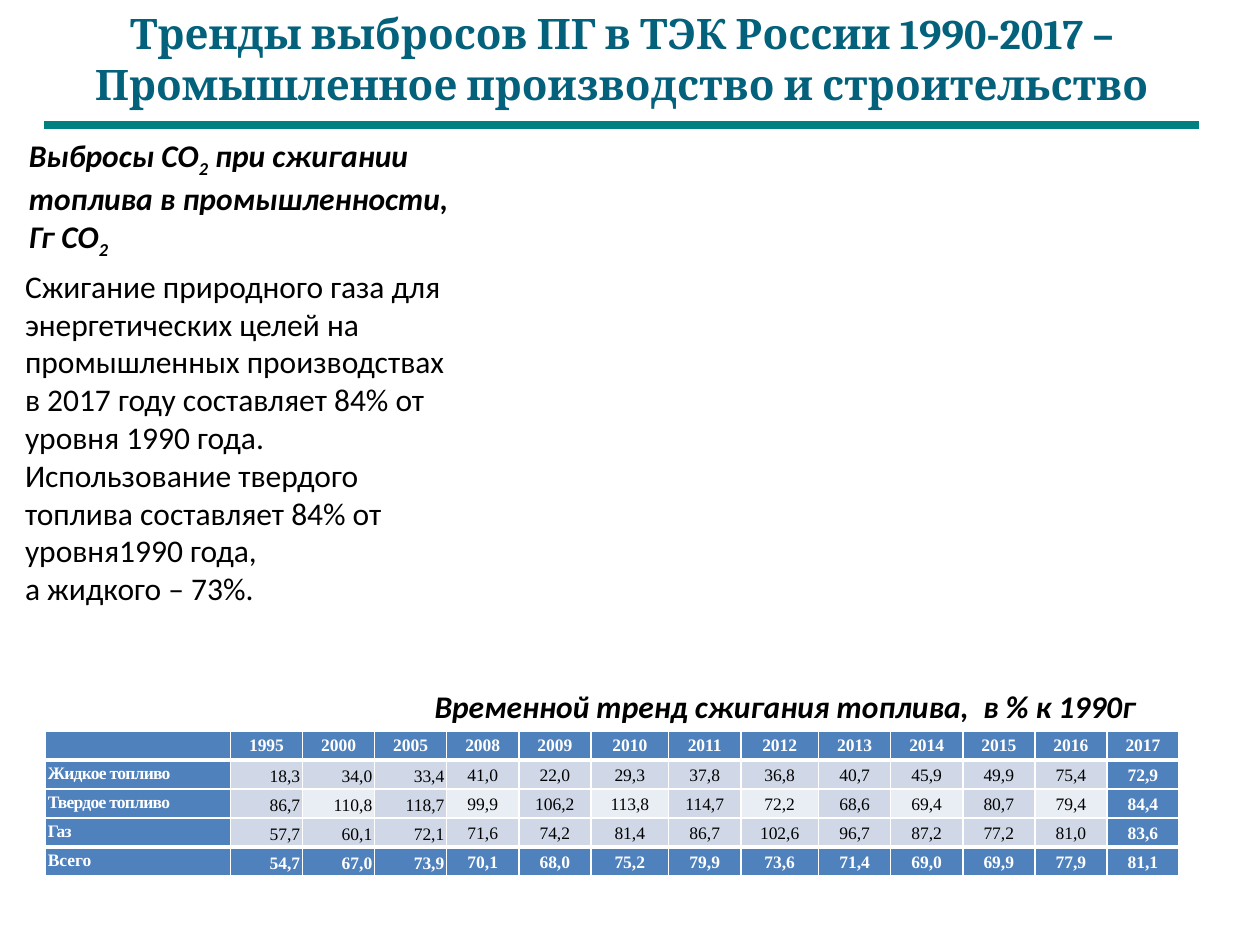
"""Build the slide on greenhouse gas emission trends in industry and construction."""
from dataclasses import dataclass

import lxml.etree
import pptx
import pptx.dml.color
import pptx.enum.shapes
import pptx.enum.text
import pptx.oxml.ns
import pptx.util

Pt = pptx.util.Pt
Align = pptx.enum.text.PP_ALIGN
Anchor = pptx.enum.text.MSO_ANCHOR
AutoSize = pptx.enum.text.MSO_AUTO_SIZE
qn = pptx.oxml.ns.qn

WHITE, BLACK = "FFFFFF", "000000"
ACCENT, BAND, PALE_BAND = "4F81BD", "D0D8E8", "E9EDF4"
TITLE_COLOR, RULE_COLOR = "04617B", "008080"
SUBSCRIPT = "-25000"

YEARS = "1995 2000 2005 2008 2009 2010 2011 2012 2013 2014 2015 2016 2017"
FUELS = {
    "Жидкое топливо": "18,3 34,0 33,4 41,0 22,0 29,3 37,8 36,8 40,7 45,9 49,9 75,4 72,9",
    "Твердое топливо": "86,7 110,8 118,7 99,9 106,2 113,8 114,7 72,2 68,6 69,4 80,7 79,4 84,4",
    "Газ": "57,7 60,1 72,1 71,6 74,2 81,4 86,7 102,6 96,7 87,2 77,2 81,0 83,6",
    "Всего": "54,7 67,0 73,9 70,1 68,0 75,2 79,9 73,6 71,4 69,0 69,9 77,9 81,1",
}
LABEL_WIDTH, YEAR_WIDTH, WIDE_YEAR_WIDTH, ROW_HEIGHT = 105.8, 41.2, 44.5, 16
WIDE_YEARS = ("2010", "2012")
RIGHT_ALIGNED_COLUMNS = (1, 2, 3)


@dataclass(frozen=True)
class Note:
    """A text block; each paragraph is a list of pieces, every second one subscript."""
    left: float
    top: float
    width: float
    height: float
    paragraphs: list[list[str]]
    emphasis: bool


NOTES = [
    Note(9.4, 74.2, 254.9, 72.7,
         [["Выбросы СО", "2", " при сжигании топлива в промышленности, Гг СО", "2"]], True),
    Note(241.2, 388.8, 433.4, 29,
         [["Временной тренд сжигания топлива,  в % к 1990г"]], True),
    Note(7.2, 149, 265.7, 203.8,
         [["Сжигание природного газа для энергетических целей на промышленных "
           "производствах в 2017 году составляет 84% от уровня 1990 года. "
           "Использование твердого топлива составляет 84% от уровня1990 года,"],
          ["а жидкого – 73%."]], False),
]


def rgb(color: str) -> pptx.dml.color.RGBColor:
    """Turn a hex string into a colour."""
    return pptx.dml.color.RGBColor.from_string(color)


def style_font(font, name: str, size: float, color: str, bold: bool, italic: bool = False) -> None:
    """Set the look of a font."""
    font.name, font.size, font.bold, font.italic = name, Pt(size), bold, italic
    font.color.rgb = rgb(color)


def place(shape, left: float, top: float, width: float, height: float) -> None:
    """Position a shape."""
    shape.left, shape.top = Pt(left), Pt(top)
    shape.width, shape.height = Pt(width), Pt(height)


def add_title(slide) -> None:
    """Fill and format the title placeholder."""
    title = slide.shapes.title
    place(title, 25.2, 9.4, 660.2, 52.6)
    frame = title.text_frame
    frame.text = "Тренды выбросов ПГ в ТЭК России 1990-2017 – Промышленное производство и строительство"
    frame.word_wrap, frame.auto_size = True, AutoSize.NONE
    frame.vertical_anchor = Anchor.BOTTOM
    frame.margin_left = frame.margin_right = frame.margin_bottom = 0
    frame.margin_top = Pt(3.6)
    paragraph = frame.paragraphs[0]
    paragraph.alignment = Align.CENTER
    style_font(paragraph.font, "Cambria", 24, TITLE_COLOR, True)


def add_rule(slide) -> None:
    """Draw the line below the title."""
    rule = slide.shapes.add_connector(
        pptx.enum.shapes.MSO_CONNECTOR.STRAIGHT, Pt(25.2), Pt(71.3), Pt(685.4), Pt(71.3))
    rule.line.color.rgb, rule.line.width = rgb(RULE_COLOR), Pt(4.5)
    lxml.etree.SubElement(rule._element.spPr, qn("a:effectLst"))


def add_note(slide, note: Note) -> None:
    """Add a text block."""
    box = slide.shapes.add_textbox(Pt(note.left), Pt(note.top), Pt(note.width), Pt(note.height))
    frame = box.text_frame
    frame.word_wrap, frame.auto_size = True, AutoSize.SHAPE_TO_FIT_TEXT
    for index, pieces in enumerate(note.paragraphs):
        paragraph = frame.add_paragraph() if index else frame.paragraphs[0]
        style_font(paragraph.font, "Calibri", 18, BLACK, note.emphasis, note.emphasis)
        for position, piece in enumerate(pieces):
            run = paragraph.add_run()
            run.text = piece
            if position % 2:
                run._r.get_or_add_rPr().set("baseline", SUBSCRIPT)


def set_borders(cell, thick_sides: str) -> None:
    """Give a cell white borders, thicker on the named sides."""
    properties = cell._tc.get_or_add_tcPr()
    for index, side in enumerate("LRTB"):
        width = Pt(3 if side in thick_sides else 1)
        line = lxml.etree.Element(qn(f"a:ln{side}"), w=str(int(width)))
        fill = lxml.etree.SubElement(line, qn("a:solidFill"))
        lxml.etree.SubElement(fill, qn("a:srgbClr"), val=WHITE)
        properties.insert(index, line)


def fill_cell(cell, text: str, row: int, column: int, last_row: int, last_column: int) -> None:
    """Write and format one table cell by its place in the table."""
    is_heading = row in (0, last_row) or column in (0, last_column)
    striped = row == 2 and column % 2 == 0
    cell.fill.solid()
    cell.fill.fore_color.rgb = rgb(ACCENT if is_heading else PALE_BAND if striped else BAND)
    set_borders(cell, {0: "B", 1: "T", last_row - 1: "B", last_row: "T"}.get(row, ""))
    cell.margin_left = cell.margin_right = cell.margin_top = cell.margin_bottom = Pt(1.4)
    cell.text = text
    paragraph = cell.text_frame.paragraphs[0]
    style_font(paragraph.font, "Times New Roman", 10, WHITE if is_heading else BLACK, is_heading)
    paragraph.line_spacing = 1.15 if column else 1.1
    if not text:
        lxml.etree.SubElement(paragraph._p, qn("a:endParaRPr"), sz="1000")
    elif column == 0:
        if row < last_row:
            paragraph.runs[0]._r.get_or_add_rPr().set("spc", "-40")
    elif row and column in RIGHT_ALIGNED_COLUMNS:
        paragraph.alignment, cell.vertical_anchor = Align.RIGHT, Anchor.BOTTOM
    else:
        paragraph.alignment = Align.CENTER
        cell.vertical_anchor = Anchor.MIDDLE if row else Anchor.TOP


def add_fuel_table(slide) -> None:
    """Add the table of fuel use by year."""
    years = YEARS.split()
    rows = [["", *years]] + [[fuel, *shares.split()] for fuel, shares in FUELS.items()]
    widths = [LABEL_WIDTH] + [WIDE_YEAR_WIDTH if year in WIDE_YEARS else YEAR_WIDTH for year in years]
    table = slide.shapes.add_table(
        len(rows), len(widths), Pt(25.9), Pt(417.6), Pt(sum(widths)), Pt(ROW_HEIGHT * len(rows))).table
    for column, width in zip(table.columns, widths):
        column.width = Pt(width)
    for row, texts in enumerate(rows):
        table.rows[row].height = Pt(ROW_HEIGHT)
        for column, text in enumerate(texts):
            fill_cell(table.cell(row, column), text, row, column, len(rows) - 1, len(years))


def main() -> None:
    """Build and save the slide."""
    presentation = pptx.Presentation()
    presentation.slide_width, presentation.slide_height = Pt(720), Pt(540)
    slide = presentation.slides.add_slide(presentation.slide_layouts.get_by_name("Title Only"))
    add_title(slide)
    add_rule(slide)
    for note in NOTES:
        add_note(slide, note)
    add_fuel_table(slide)
    presentation.save("out.pptx")


if __name__ == "__main__":
    main()
